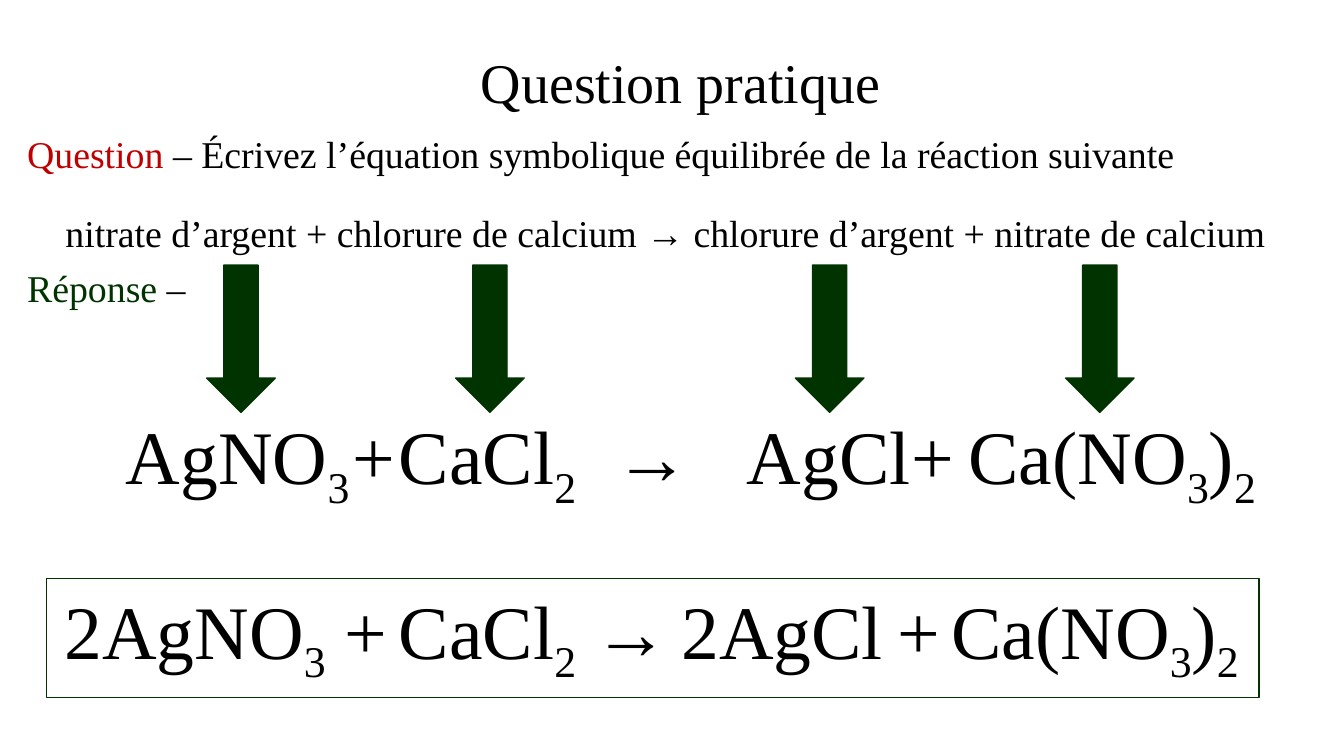
from pptx import Presentation
from pptx import util as u
from pptx.dml.color import RGBColor
from pptx.enum import shapes, text


class ReactionSlide:
    """Draws the slide's elements, with lengths in percent of the slide's size."""

    FONT = "Times New Roman"
    COLORS = {"ink": "000000", "question": "C00000", "answer": "003300"}
    TITLE, BODY, FORMULA = 40, 27, 54

    def __init__(self, presentation):
        self.width = presentation.slide_width
        self.height = presentation.slide_height
        self.slide = presentation.slides.add_slide(presentation.slide_layouts[6])

    def box(self, left, top, width, height):
        return (int(left * self.width / 100), int(top * self.height / 100),
                int(width * self.width / 100), int(height * self.height / 100))

    def color(self, name):
        return RGBColor.from_string(self.COLORS[name])

    def add_run(self, paragraph, words, size, color="ink", subscript=False):
        run = paragraph.add_run()
        run.text = words
        run.font.name = self.FONT
        run.font.size = u.Pt(size)
        run.font.color.rgb = self.color(color)
        if subscript:
            run.font._element.set("baseline", "-25000")

    def add_frame(self, place, centered=False):
        frame = self.slide.shapes.add_textbox(*self.box(*place)).text_frame
        frame.word_wrap = False
        frame.auto_size = text.MSO_AUTO_SIZE.SHAPE_TO_FIT_TEXT
        paragraph = frame.paragraphs[0]
        paragraph.alignment = text.PP_ALIGN.CENTER if centered else text.PP_ALIGN.LEFT
        return frame, paragraph

    def title(self, words, place):
        frame, paragraph = self.add_frame(place, centered=True)
        frame.word_wrap = True
        frame.auto_size = text.MSO_AUTO_SIZE.NONE
        frame.vertical_anchor = text.MSO_ANCHOR.MIDDLE
        paragraph.line_spacing = 0.9
        self.add_run(paragraph, words, self.TITLE)

    def line(self, runs, place):
        paragraph = self.add_frame(place)[1]
        for words, color in runs:
            self.add_run(paragraph, words, self.BODY, color)

    def formula(self, notation, place):
        paragraph = self.add_frame(place, centered=notation in "+→")[1]
        first, *rest = notation.split("_")
        self.add_run(paragraph, first, self.FORMULA)
        for part in rest:
            self.add_run(paragraph, part[0], self.FORMULA, subscript=True)
            if part[1:]:
                self.add_run(paragraph, part[1:], self.FORMULA)

    def equation(self, terms, top):
        for notation, left, width in terms:
            self.formula(notation, (left, top, width, 13.47))

    def outline(self, kind, place, filled=False):
        shape = self.slide.shapes.add_shape(kind, *self.box(*place))
        shape.shadow.inherit = False
        shape.line.color.rgb = self.color("answer")
        shape.line.width = u.Pt(1)
        if filled:
            shape.fill.solid()
            shape.fill.fore_color.rgb = self.color("answer")
        else:
            shape.fill.background()

    def arrow(self, left):
        self.outline(shapes.MSO_SHAPE.DOWN_ARROW, (left, 35.07, 5.1, 19.47), filled=True)

    def frame(self, place):
        self.outline(shapes.MSO_SHAPE.RECTANGLE, place)


def main():
    presentation = Presentation()
    presentation.slide_width = u.Inches(13.33)
    presentation.slide_height = u.Inches(7.5)
    slide = ReactionSlide(presentation)

    slide.title("Question pratique", (1.28, 1.6, 98.72, 19.47))
    slide.line([("Question ", "question"),
                ("– Écrivez l’équation symbolique équilibrée de la réaction suivante", "ink")],
               (1.28, 16.67, 89.85, 7.47))
    slide.line([("nitrate d’argent + chlorure de calcium → "
                 "chlorure d’argent + nitrate de calcium", "ink")],
               (4.13, 27.07, 91.73, 7.47))
    slide.line([("Réponse ", "answer"), ("–", "ink")], (1.28, 34.4, 14.1, 7.47))

    for left in (15.38, 33.9, 59.18, 79.28):
        slide.arrow(left)

    slide.equation([("AgNO_3", 8.63, 18.53), ("+", 25.43, 4.73),
                    ("CaCl_2", 28.95, 15.08), ("→", 44.93, 7.2),
                    ("AgCl", 54.83, 13.8), ("+", 67.05, 4.73),
                    ("Ca(NO_3)_2", 71.33, 23.63)], 53.47)
    slide.equation([("2AgNO_3", 4.05, 21.38), ("+", 24.83, 4.73),
                    ("CaCl_2", 28.95, 15.08), ("→", 43.35, 7.2),
                    ("2AgCl", 49.95, 16.65), ("+", 66, 4.73),
                    ("Ca(NO_3)_2", 70.05, 23.63)], 76.53)
    slide.frame((3.45, 76.53, 90.23, 15.73))

    presentation.save("out.pptx")


if __name__ == "__main__":
    main()
